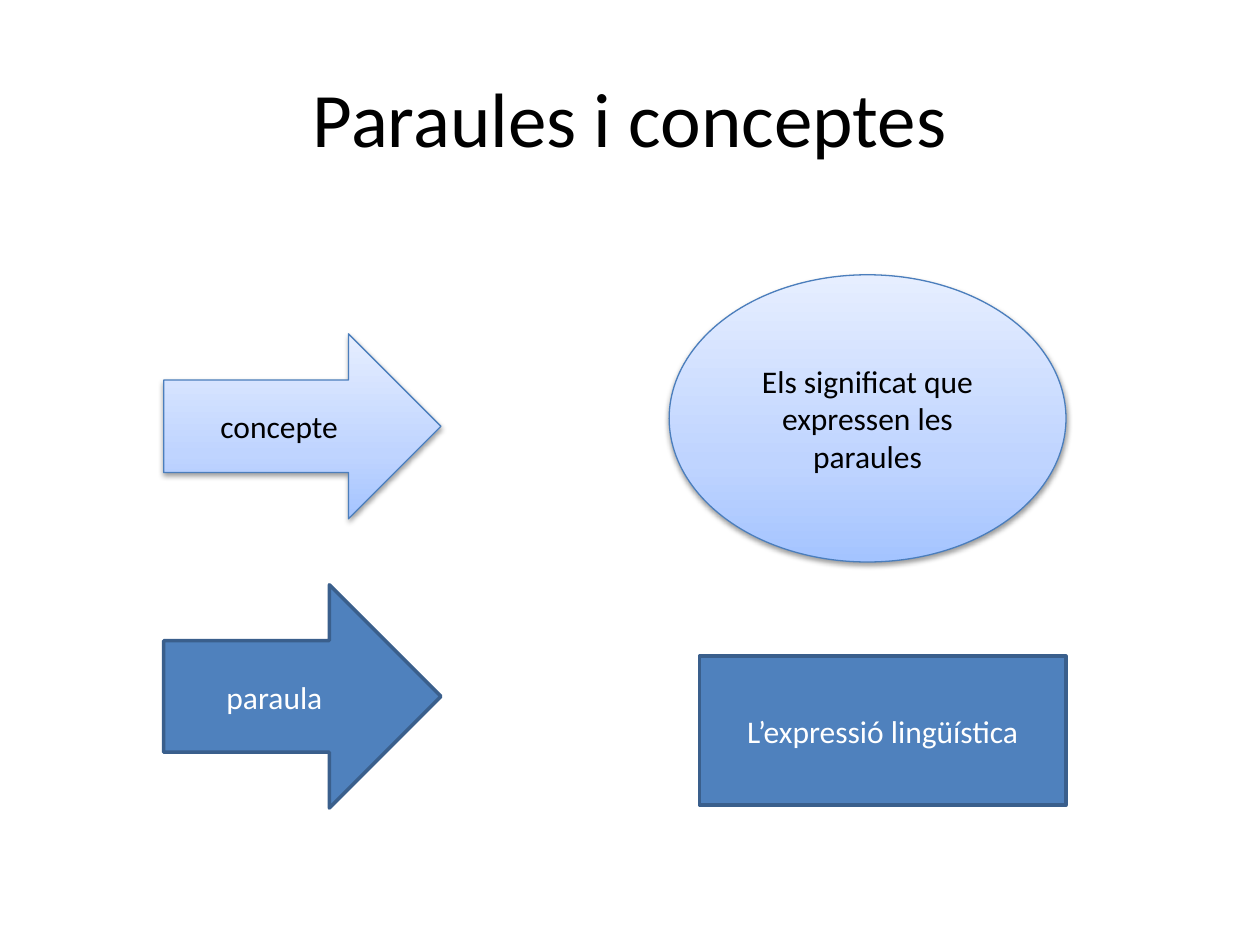
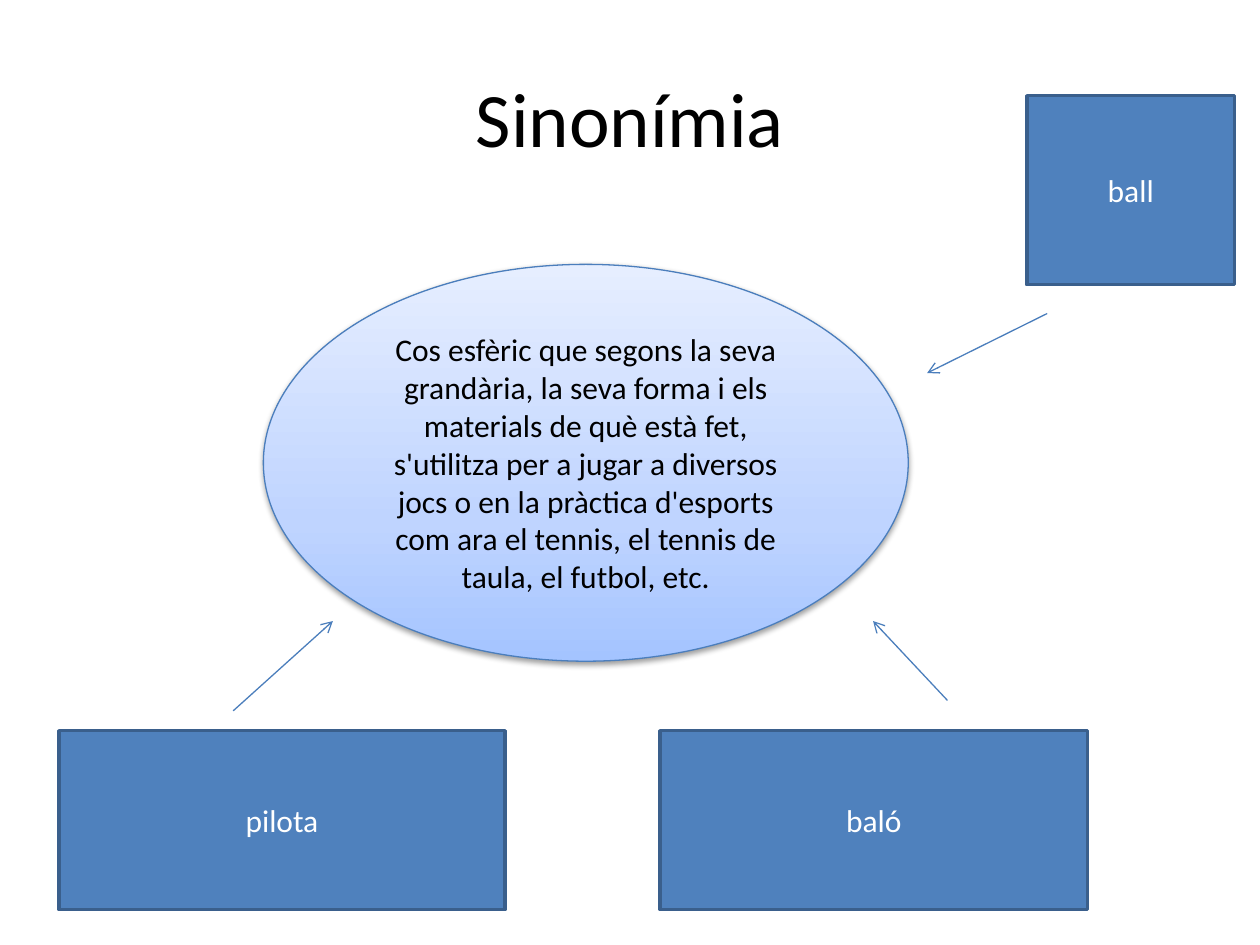
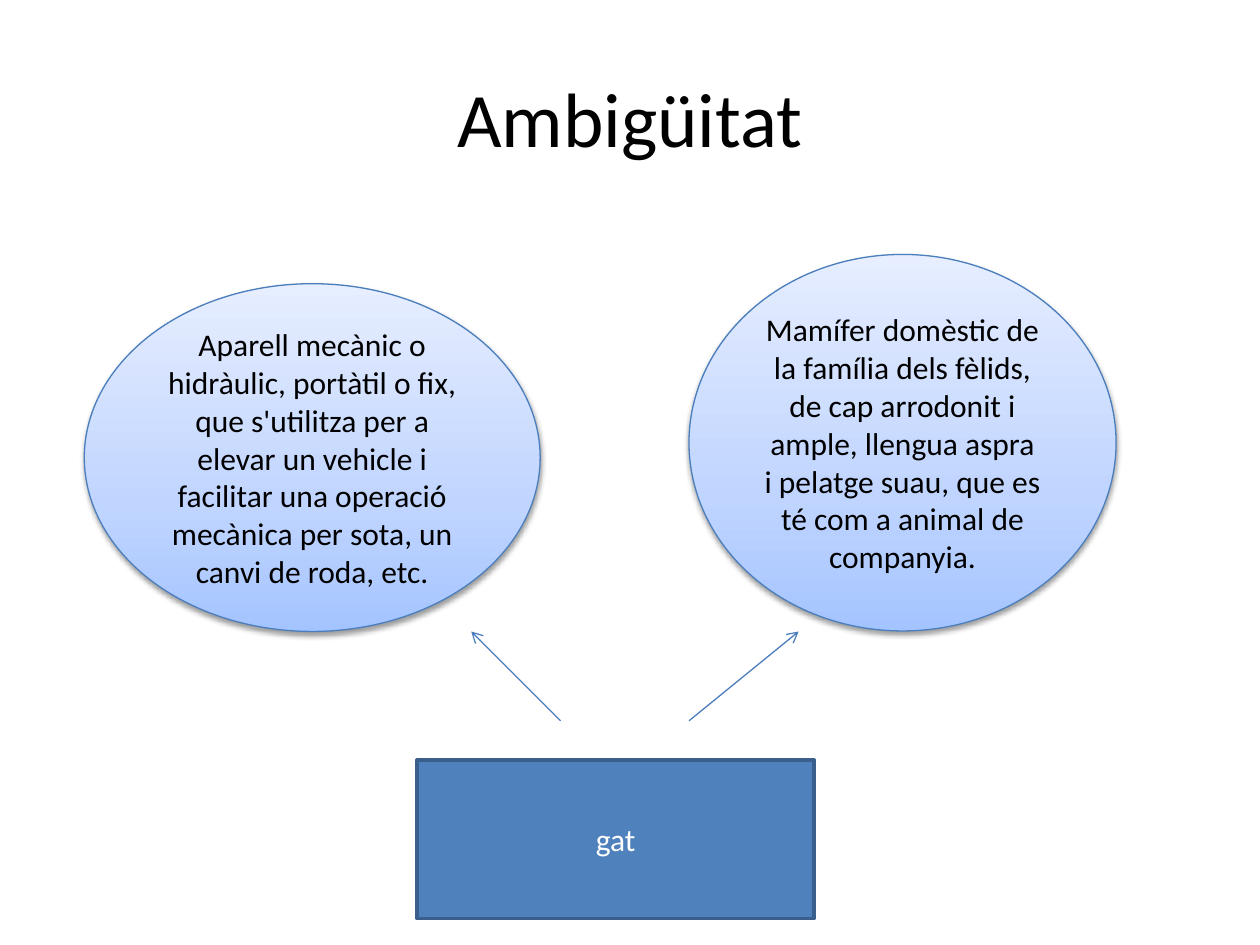
"""Build three slides on words, concepts, synonymy and ambiguity."""
from copy import deepcopy

from pptx import Presentation
from pptx.dml.color import RGBColor
from pptx.enum.shapes import MSO_CONNECTOR, MSO_SHAPE
from pptx.enum.text import MSO_ANCHOR, PP_ALIGN
from pptx.oxml import parse_xml
from pptx.oxml.ns import nsdecls, qn
from pptx.util import Cm, Pt

FONT = "Calibri"
BLACK, WHITE = "000000", "FFFFFF"
WORD_FILL, WORD_LINE = "4F81BD", "3A5F8C"
CONCEPT_LINE = "4B7EBC"
CONCEPT_STOPS = [(0, "A4C4FF"), (0.35, "BFD4FF"), (1, "E6EEFF")]
SHADOW = (
    f'<a:outerShdw {nsdecls("a")} blurRad="40000" dist="20000" dir="5400000" rotWithShape="0">'
    f'<a:srgbClr val="{BLACK}"><a:alpha val="38000"/></a:srgbClr></a:outerShdw>'
)
RECTANGLE, OVAL, ARROW = MSO_SHAPE.RECTANGLE, MSO_SHAPE.OVAL, MSO_SHAPE.RIGHT_ARROW

SLIDES = [
    ("Paraules i conceptes", [
        ("word", RECTANGLE, (14.1, 13.23, 7.39, 3), "L’expressió lingüística"),
        ("concept", OVAL, (13.49, 5.54, 8, 5.79), "Els significat que expressen les paraules"),
        ("word", ARROW, (3.3, 11.79, 5.59, 4.5), "paraula"),
        ("concept", ARROW, (3.3, 6.73, 5.59, 3.73), "concepte"),
    ], []),
    ("Sinonímia", [
        ("concept", OVAL, (5.31, 5.33, 13, 8),
         "Cos esfèric que segons la seva grandària, la seva forma i els materials de què "
         "està fet, s'utilitza per a jugar a diversos jocs o en la pràctica d'esports com "
         "ara el tennis, el tennis de taula, el futbol, etc."),
        ("word", RECTANGLE, (1.19, 14.73, 8.99, 3.61), "pilota"),
        ("word", RECTANGLE, (13.31, 14.73, 8.61, 3.61), "baló"),
        ("word", RECTANGLE, (20.7, 1.93, 4.19, 3.81), "ball"),
    ], [
        (4.7, 14.33, 6.71, 12.52),
        (19.1, 14.12, 17.6, 12.52),
        (21.11, 6.32, 18.69, 7.52),
    ]),
    ("Ambigüitat", [
        ("concept", OVAL, (1.7, 5.72, 9.19, 7.01),
         "Aparell mecànic o hidràulic, portàtil o fix, que s'utilitza per a elevar un "
         "vehicle i facilitar una operació mecànica per sota, un canvi de roda, etc."),
        ("concept", OVAL, (13.89, 5.13, 8.61, 7.59),
         "Mamífer domèstic de la família dels fèlids, de cap arrodonit i ample, llengua "
         "aspra i pelatge suau, que es té com a animal de companyia."),
        ("word", RECTANGLE, (8.41, 15.32, 8, 3.2), "gat"),
    ], [
        (11.3, 14.53, 9.5, 12.73),
        (13.89, 14.53, 16.1, 12.73),
    ]),
]


def rgb(color):
    """Turn a hex string into a colour."""
    return RGBColor.from_string(color)


def write_text(frame, text, size=18, color=BLACK):
    """Fill a text frame with one centred paragraph."""
    frame.word_wrap = True
    frame.vertical_anchor = MSO_ANCHOR.MIDDLE
    para = frame.paragraphs[0]
    para.alignment = PP_ALIGN.CENTER
    span = para.add_run()
    span.text = text
    span.font.name = FONT
    span.font.size = Pt(size)
    span.font.color.rgb = rgb(color)


deck = Presentation()
deck.slide_width, deck.slide_height = Cm(25.4), Cm(19.05)
title_only = deck.slide_layouts[5]

for heading, boxes, arrows in SLIDES:
    page = deck.slides.add_slide(title_only)
    title = page.shapes.title
    title.left, title.top, title.width, title.height = Cm(1.27), Cm(0.76), Cm(22.86), Cm(3.18)
    write_text(title.text_frame, heading, size=44)

    for role, preset, place, text in boxes:
        box = page.shapes.add_shape(preset, *[Cm(length) for length in place])
        box.shadow.inherit = False
        if role == "word":
            box.fill.solid()
            box.fill.fore_color.rgb = rgb(WORD_FILL)
            box.line.color.rgb = rgb(WORD_LINE)
            box.line.width = Pt(2)
            write_text(box.text_frame, text, color=WHITE)
        else:
            box.fill.gradient()
            box.fill.gradient_angle = 90
            stop_list = box.element.spPr.find(".//" + qn("a:gsLst"))
            stop_list.insert(1, deepcopy(stop_list[0]))
            for stop, (position, color) in zip(box.fill.gradient_stops, CONCEPT_STOPS):
                stop.position = position
                stop.color.rgb = rgb(color)
            box.line.color.rgb = rgb(CONCEPT_LINE)
            box.line.width = Pt(0.75)
            box.element.spPr.find(qn("a:effectLst")).append(parse_xml(SHADOW))
            write_text(box.text_frame, text)

    for ends in arrows:
        arrow = page.shapes.add_connector(MSO_CONNECTOR.STRAIGHT, *[Cm(length) for length in ends])
        arrow.line.color.rgb = rgb(CONCEPT_LINE)
        arrow.line.width = Pt(0.75)
        arrow.line._get_or_add_ln().append(parse_xml(f'<a:tailEnd {nsdecls("a")} type="arrow"/>'))
        arrow.element.spPr.append(parse_xml(f'<a:effectLst {nsdecls("a")}/>'))

deck.save("out.pptx")
